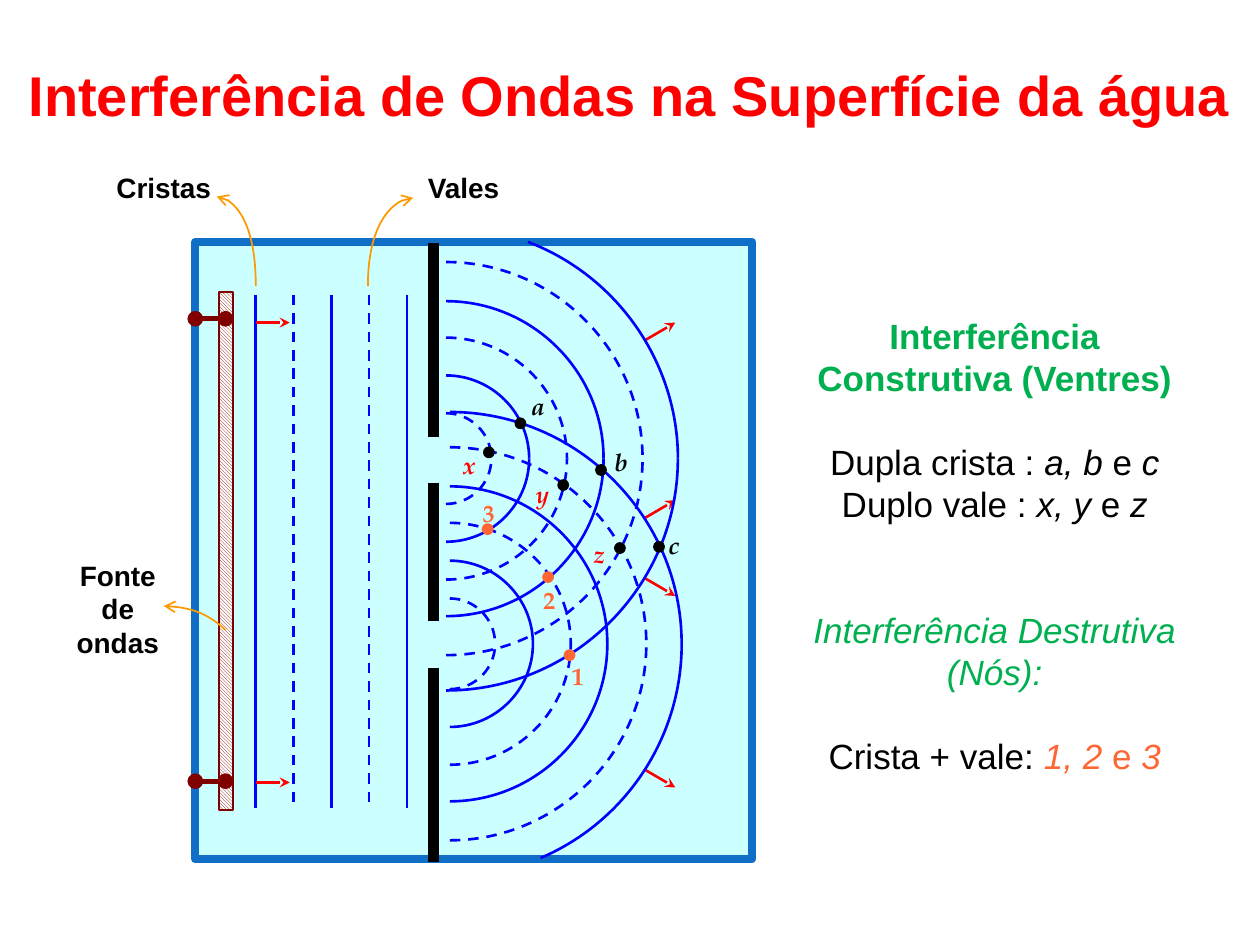
import lxml.etree
import pptx
import pptx.dml.color
import pptx.enum.dml
import pptx.enum.shapes
import pptx.enum.text
import pptx.oxml.ns
import pptx.util
from pptx.util import Inches

RGBColor = pptx.dml.color.RGBColor
BLACK = RGBColor(0x00, 0x00, 0x00)
WHITE = RGBColor(0xFF, 0xFF, 0xFF)
RED = RGBColor(0xFF, 0x00, 0x00)
GREEN = RGBColor(0x00, 0xB0, 0x50)
WAVE_BLUE = RGBColor(0x00, 0x00, 0xFF)
BASIN_BLUE = RGBColor(0x0F, 0x6F, 0xC6)
WATER = RGBColor(0xCC, 0xFF, 0xFF)
MAROON = RGBColor(0x80, 0x00, 0x00)
AMBER = RGBColor(0xFF, 0x99, 0x00)
ORANGE = RGBColor(0xFF, 0x66, 0x33)

SANS = "Arial"
SERIF = "TeX Gyre Pagella"
RECTANGLE = pptx.enum.shapes.MSO_SHAPE.RECTANGLE
OVAL = pptx.enum.shapes.MSO_SHAPE.OVAL
STRAIGHT = pptx.enum.shapes.MSO_CONNECTOR.STRAIGHT
DASH = pptx.enum.dml.MSO_LINE.DASH
qn = pptx.oxml.ns.qn


def style_line(shape, color, width, dashed=False, head=None, tail=None):
    """Set the outline with its arrowheads, and remove the theme shadow."""
    shape.line.color.rgb = color
    shape.line.width = pptx.util.Pt(width)
    if dashed:
        shape.line.dash_style = DASH
    properties = shape._element.spPr
    outline = properties.find(qn("a:ln"))
    for tag, kind in (("a:headEnd", head), ("a:tailEnd", tail)):
        if kind:
            lxml.etree.SubElement(outline, qn(tag), type=kind)
    lxml.etree.SubElement(properties, qn("a:effectLst"))


def add_text(place, paragraphs, size, font=SANS, inset=(0, 0)):
    """Add a centred box; a paragraph is (space before, runs), a run (text, color, bold, italic)."""
    box = page.shapes.add_textbox(*map(Inches, place))
    frame = box.text_frame
    frame.word_wrap = True
    frame.margin_left = frame.margin_right = Inches(inset[0])
    frame.margin_top = frame.margin_bottom = Inches(inset[1])
    for index, (space, runs) in enumerate(paragraphs):
        para = frame.paragraphs[0] if index == 0 else frame.add_paragraph()
        para.alignment = pptx.enum.text.PP_ALIGN.CENTER
        para.space_before = pptx.util.Pt(space)
        for text, color, bold, italic in runs:
            span = para.add_run()
            span.text = text
            span.font.name = font
            span.font.size = pptx.util.Pt(size)
            span.font.bold = bold
            span.font.italic = italic
            span.font.color.rgb = color
    return box


deck = pptx.Presentation()
deck.slide_width = Inches(10)
deck.slide_height = Inches(7.5)
page = deck.slides.add_slide(deck.slide_layouts[6])

title = add_text((0, 0.35, 10, 0.74),
                 [(0, [("Interferência de Ondas na Superfície da água", RED, True, False)])], 32)
title.text_frame.margin_top = Inches(0.05)
title.text_frame.vertical_anchor = pptx.enum.text.MSO_ANCHOR.MIDDLE

# Water basin and wave source
basin = page.shapes.add_shape(RECTANGLE, Inches(1.55), Inches(1.92), Inches(4.42), Inches(4.9))
basin.fill.solid()
basin.fill.fore_color.rgb = WATER
style_line(basin, BASIN_BLUE, 4.5)

source_bar = page.shapes.add_shape(RECTANGLE, Inches(1.74), Inches(2.32), Inches(0.11), Inches(4.11))
source_bar.fill.patterned()
source_bar.fill.pattern = pptx.enum.dml.MSO_PATTERN.LIGHT_DOWNWARD_DIAGONAL
source_bar.fill.fore_color.rgb = MAROON
source_bar.fill.back_color.rgb = WHITE
style_line(source_bar, MAROON, 1)

# Straight lines: (x1, y1, x2, y2), color, width, dashed, head, tail
straight_lines = []
for top, bottom in ((1.93, 3.47), (3.83, 4.93), (5.3, 6.84)):
    straight_lines.append(((3.44, top, 3.44, bottom), BLACK, 6, False, None, None))
for y in (2.53, 6.2):
    straight_lines.append(((1.55, y, 1.79, y), MAROON, 3, False, "oval", "oval"))
for index in range(5):
    x = 2.03 + 0.3 * index
    straight_lines.append(((x, 2.34, x, 6.41), WAVE_BLUE, 1.5, index % 2 == 1, None, None))
for y in (2.56, 6.21):
    straight_lines.append(((2.03, y, 2.3, y), RED, 1.5, False, None, "stealth"))
for y, rise in ((2.7, -0.14), (4.59, 0.14), (4.11, -0.14), (6.11, 0.14)):
    straight_lines.append(((5.12, y, 5.36, y + rise), RED, 1.5, False, None, "stealth"))

for ends, color, width, dashed, head, tail in straight_lines:
    connector = page.shapes.add_connector(STRAIGHT, *map(Inches, ends))
    style_line(connector, color, width, dashed, head, tail)

# Curves: four Bezier control points, color, width, dashed, head
curves = [
    (((1.3, 4.81), (1.47, 4.81), (1.65, 4.87), (1.79, 5)), AMBER, 1, False, "arrow"),
    (((1.72, 1.56), (1.89, 1.56), (2.03, 1.88), (2.03, 2.27)), AMBER, 1, False, "arrow"),
    (((3.28, 1.57), (3.08, 1.57), (2.92, 1.89), (2.92, 2.27)), AMBER, 1, False, "arrow"),
]
CLIPPED_FRONTS = {
    ("upper slit", -1): ((4.19, 1.92), (4.9, 2.19), (5.38, 2.88), (5.38, 3.64)),
    ("lower slit", 1): ((4.29, 6.81), (4.97, 6.52), (5.41, 5.85), (5.41, 5.11)),
}
RADII = (0.36, 0.66, 0.96, 1.25, 1.56, 1.84)
CIRCLE_RATIO = 0.55
for slit, x, y in (("upper slit", 3.54, 3.64), ("lower slit", 3.57, 5.11)):
    for index, radius in enumerate(RADII):
        handle = CIRCLE_RATIO * radius
        for side in (-1, 1):
            controls = ((x, y + side * radius), (x + handle, y + side * radius),
                        (x + radius, y + side * handle), (x + radius, y))
            if radius == RADII[-1]:
                controls = CLIPPED_FRONTS.get((slit, side), controls)
            curves.append((controls, WAVE_BLUE, 1.5, index % 2 == 0, None))

for controls, color, width, dashed, head in curves:
    points = [(Inches(x), Inches(y)) for x, y in controls]
    builder = page.shapes.build_freeform(*points[0])
    builder.add_line_segments(points[1:], close=False)
    curve = builder.convert_to_shape()
    # Join the three straight segments into one cubic curve
    stroke = curve._element.spPr.find(".//" + qn("a:path"))
    segments = stroke.findall(qn("a:lnTo"))
    bezier = lxml.etree.SubElement(stroke, qn("a:cubicBezTo"))
    for segment in segments:
        bezier.append(segment[0])
        stroke.remove(segment)
    curve.fill.background()
    style_line(curve, color, width, dashed, head)

# Labels of the waves
for text, place in (("Fonte de ondas", (0.48, 4.43, 0.91, 0.82)),
                    ("Cristas", (0.87, 1.35, 0.86, 0.22)),
                    ("Vales", (3.26, 1.35, 0.84, 0.22))):
    add_text(place, [(0, [(text, BLACK, True, False)])], 16)

# Interference points: label, label place, label color, dot left and top, dot color
interference_points = (
    ("x", (3.62, 3.57, 0.21, 0.28), RED, (3.84, 3.55), BLACK),
    ("y", (4.2, 3.8, 0.21, 0.26), RED, (4.43, 3.81), BLACK),
    ("z", (4.66, 4.28, 0.19, 0.32), RED, (4.88, 4.31), BLACK),
    ("a", (4.14, 3.1, 0.26, 0.25), BLACK, (4.09, 3.32), BLACK),
    ("b", (4.79, 3.55, 0.28, 0.25), BLACK, (4.73, 3.69), BLACK),
    ("c", (5.24, 4.21, 0.22, 0.26), BLACK, (5.19, 4.3), BLACK),
    ("1", (4.51, 5.25, 0.15, 0.23), ORANGE, (4.48, 5.16), ORANGE),
    ("2", (4.28, 4.64, 0.16, 0.25), ORANGE, (4.31, 4.54), ORANGE),
    ("3", (3.73, 3.95, 0.3, 0.28), ORANGE, (3.83, 4.16), ORANGE),
)
for label, place, label_color, corner, dot_color in interference_points:
    add_text(place, [(0, [(label, label_color, True, label.isalpha())])], 14, SERIF)
    dot = page.shapes.add_shape(OVAL, *map(Inches, corner), Inches(0.08), Inches(0.08))
    dot.fill.solid()
    dot.fill.fore_color.rgb = dot_color
    style_line(dot, dot_color, 1)

# Explanation on the right
LINE = 24
add_text((6.31, 2.45, 3.17, 3.77), [
    (0, [("Interferência Construtiva (Ventres)", GREEN, True, False)]),
    (LINE, [("Dupla crista : ", BLACK, False, False), ("a, b", BLACK, False, True),
            (" e ", BLACK, False, False), ("c", BLACK, False, True)]),
    (0, [("Duplo vale : ", BLACK, False, False), ("x, y ", BLACK, False, True),
         ("e ", BLACK, False, False), ("z", BLACK, False, True)]),
    (2 * LINE, [("Interferência Destrutiva (Nós):", GREEN, False, True)]),
    (LINE, [("Crista + vale: ", BLACK, False, False), ("1, 2 ", ORANGE, False, True),
            ("e ", ORANGE, False, False), ("3", ORANGE, False, True)]),
], 20, inset=(0.1, 0.05))

deck.save("out.pptx")
